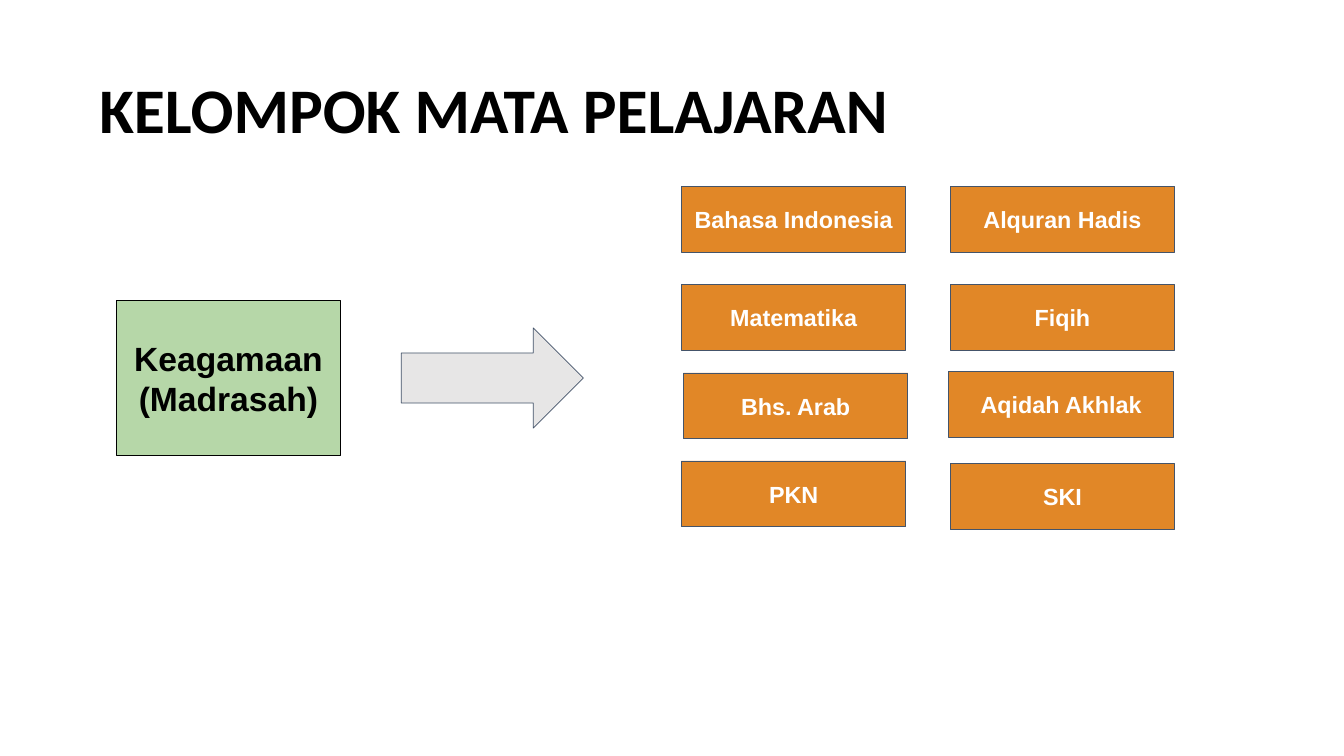
from pptx import Presentation
from pptx.dml.color import RGBColor
from pptx.enum.shapes import MSO_SHAPE
from pptx.enum.text import MSO_ANCHOR, PP_ALIGN
from pptx.util import Emu, Pt

RECTANGLE = MSO_SHAPE.RECTANGLE
RIGHT_ARROW = MSO_SHAPE.RIGHT_ARROW
MIDDLE = MSO_ANCHOR.MIDDLE
LEFT, CENTER = PP_ALIGN.LEFT, PP_ALIGN.CENTER

EMU_PER_PX = 9144  # 100 px to the inch

BLACK, WHITE = "000000", "FFFFFF"
SLATE, ORANGE = "44546A", "E18727"
GREEN, GREY = "B6D7A8", "E7E6E6"

# Subject, left, top: the rows are placed by hand and not quite level
SUBJECTS = [
    ("Bahasa Indonesia", 1014, 277),
    ("Matematika", 1014, 423),
    ("Bhs. Arab", 1017, 555),
    ("PKN", 1014, 686),
    ("Alquran Hadis", 1414, 277),
    ("Fiqih", 1414, 423),
    ("Aqidah Akhlak", 1412, 553),
    ("SKI", 1414, 690),
]
BOX_WIDTH = 334
SUBJECT_HEIGHT = 98


def px(length):
    return Emu(length * EMU_PER_PX)


def color(hex_string):
    return RGBColor.from_string(hex_string)


def write_text(frame, lines, size, font_name, text_color, align, inset):
    frame.word_wrap = True
    frame.vertical_anchor = MIDDLE
    frame.margin_left = frame.margin_right = px(10)
    frame.margin_top = frame.margin_bottom = px(inset)
    frame.text = "\n".join(lines)
    for paragraph in frame.paragraphs:
        paragraph.alignment = align
        paragraph.font.name = font_name
        paragraph.font.size = Pt(size)
        paragraph.font.bold = True
        paragraph.font.color.rgb = color(text_color)


def add_title(slide, title):
    box = slide.shapes.add_textbox(px(138), px(60), px(1725), px(217))
    write_text(box.text_frame, [title], 68, "Calibri", BLACK, LEFT, 5)
    box.text_frame.paragraphs[0].line_spacing = 0.9


def add_outlined(slide, preset, left, top, width, height, fill, line):
    shape = slide.shapes.add_shape(preset, px(left), px(top), px(width), px(height))
    shape.shadow.inherit = False
    shape.fill.solid()
    shape.fill.fore_color.rgb = color(fill)
    shape.line.color.rgb = color(line)
    shape.line.width = Pt(0.75)
    return shape


def add_box(slide, lines, left, top, height, fill, line, size, text_color):
    box = add_outlined(slide, RECTANGLE, left, top, BOX_WIDTH, height, fill, line)
    write_text(box.text_frame, lines, size, "Arial", text_color, CENTER, 10)


def main():
    prs = Presentation()
    prs.slide_width, prs.slide_height = px(2000), px(1125)
    slide = prs.slides.add_slide(prs.slide_layouts[6])

    add_title(slide, "KELOMPOK MATA PELAJARAN")

    # Subject group and the arrow to its subjects
    add_box(slide, ["Keagamaan", "(Madrasah)"], 173, 447, 231, GREEN, BLACK, 36, BLACK)
    add_outlined(slide, RIGHT_ARROW, 597, 488, 271, 149, GREY, SLATE)

    # Subjects in two columns
    for subject, left, top in SUBJECTS:
        add_box(slide, [subject], left, top, SUBJECT_HEIGHT, ORANGE, SLATE, 25, WHITE)

    prs.save("out.pptx")


if __name__ == "__main__":
    main()
